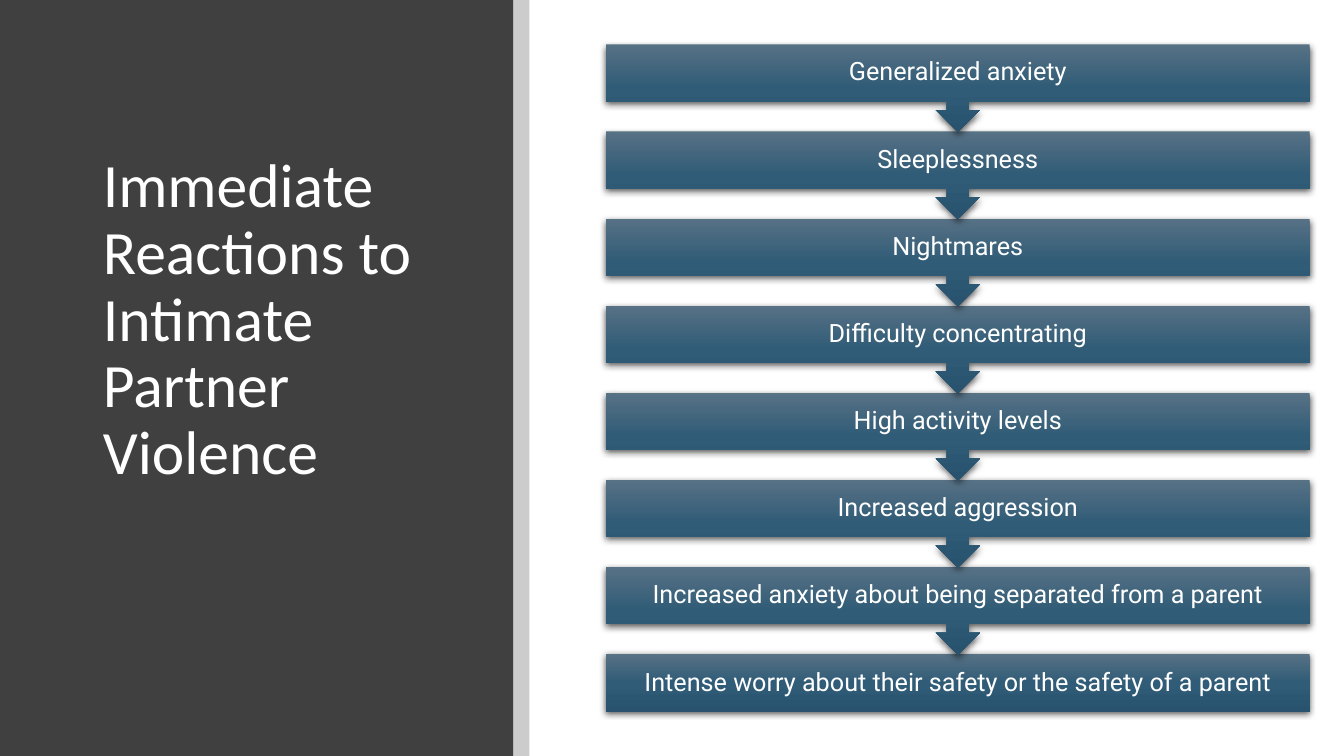
"""Build the slide on immediate reactions to intimate partner violence."""
from dataclasses import dataclass

from lxml.etree import SubElement
from pptx import Presentation
from pptx.dml.color import RGBColor
from pptx.enum.shapes import MSO_SHAPE
from pptx.enum.text import MSO_ANCHOR, MSO_AUTO_SIZE, PP_ALIGN
from pptx.oxml.ns import qn
from pptx.shapes.autoshape import Shape
from pptx.slide import Slide
from pptx.text.text import TextFrame
from pptx.util import Inches, Pt

WHITE = RGBColor(0xFF, 0xFF, 0xFF)
BLACK = RGBColor(0x00, 0x00, 0x00)
CHARCOAL = RGBColor(0x40, 0x40, 0x40)
GRADIENT = (
    (0, RGBColor(0x57, 0x71, 0x85)),
    (50, RGBColor(0x30, 0x5C, 0x77)),
    (100, RGBColor(0x28, 0x52, 0x6D)),
)

STEP_LEFT, STEP_TOP, STEP_WIDTH = 6.01, 0.44, 6.98
STEP_PITCH = 6.05 / 7
BOX_HEIGHT, CALLOUT_HEIGHT = 0.57, 0.87
REACTIONS = (
    "Generalized anxiety",
    "Sleeplessness",
    "Nightmares",
    "Difficulty concentrating",
    "High activity levels",
    "Increased aggression",
    "Increased anxiety about being separated from a parent",
    "Intense worry about their safety or the safety of a parent",
)


@dataclass
class Step:
    text: str
    top: float
    height: float
    kind: MSO_SHAPE


def write(tf: TextFrame, text: str, font: str, size: int, align: PP_ALIGN) -> None:
    tf.word_wrap = True
    tf.auto_size = MSO_AUTO_SIZE.NONE
    tf.vertical_anchor = MSO_ANCHOR.MIDDLE
    p = tf.paragraphs[0]
    p.alignment = align
    p.line_spacing = 0.9
    r = p.add_run()
    r.text = text
    r.font.name = font
    r.font.size = Pt(size)
    r.font.color.rgb = WHITE


def add_panel(s: Slide, left: float, width: float, color: RGBColor) -> Shape:
    sp = s.shapes.add_shape(MSO_SHAPE.RECTANGLE, Inches(left), 0, Inches(width), Inches(7.5))
    sp.shadow.inherit = False
    sp.fill.solid()
    sp.fill.fore_color.rgb = color
    sp.line.fill.background()
    s.shapes.title.element.addprevious(sp.element)
    return sp


def set_gradient(sp: Shape) -> None:
    sp.fill.gradient()
    sp.fill.gradient_angle = 270
    stops = sp.element.spPr.find(qn("a:gradFill")).find(qn("a:gsLst"))
    for stop in list(stops):
        stops.remove(stop)
    for percent, color in GRADIENT:
        stop = SubElement(stops, qn("a:gs"), pos=str(percent * 1000))
        SubElement(stop, qn("a:srgbClr"), val=str(color))


def set_shadow(sp: Shape) -> None:
    sp.shadow.inherit = False
    effects = sp.element.spPr.find(qn("a:effectLst"))
    shadow = SubElement(effects, qn("a:outerShdw"), blurRad=str(Pt(4.5)),
                        dist=str(Pt(1.5)), dir="5400000", algn="ctr", rotWithShape="0")
    color = SubElement(shadow, qn("a:srgbClr"), val=str(BLACK))
    SubElement(color, qn("a:alpha"), val="63000")


def add_step(s: Slide, step: Step) -> None:
    sp = s.shapes.add_shape(step.kind, Inches(STEP_LEFT), Inches(step.top),
                            Inches(STEP_WIDTH), Inches(step.height))
    set_gradient(sp)
    sp.line.fill.background()
    set_shadow(sp)
    tf = sp.text_frame
    tf.margin_left = tf.margin_right = Inches(0.14)
    tf.margin_top = tf.margin_bottom = Inches(0.14)
    write(tf, step.text, "Roboto", 18, PP_ALIGN.CENTER)


def main() -> None:
    prs = Presentation()
    prs.slide_width, prs.slide_height = Inches(13.33), Inches(7.5)
    s = prs.slides.add_slide(prs.slide_layouts[5])

    add_panel(s, 0, 5.09, CHARCOAL)
    title = s.shapes.title
    title.left, title.top = Inches(0.92), Inches(0.89)
    title.width, title.height = Inches(3.65), Inches(4.59)
    write(title.text_frame, "Immediate Reactions to Intimate Partner Violence",
          "Calibri", 44, PP_ALIGN.LEFT)
    divider = add_panel(s, 5.09, 0.16, BLACK)
    color = divider.element.spPr.find(qn("a:solidFill")).find(qn("a:srgbClr"))
    SubElement(color, qn("a:alpha"), val="20000")

    last = len(REACTIONS) - 1
    for i, text in reversed(list(enumerate(REACTIONS))):
        top = STEP_TOP + i * STEP_PITCH
        if i == last:
            step = Step(text, top, BOX_HEIGHT, MSO_SHAPE.RECTANGLE)
        else:
            step = Step(text, top, CALLOUT_HEIGHT, MSO_SHAPE.DOWN_ARROW_CALLOUT)
        add_step(s, step)

    prs.save("out.pptx")


if __name__ == "__main__":
    main()
